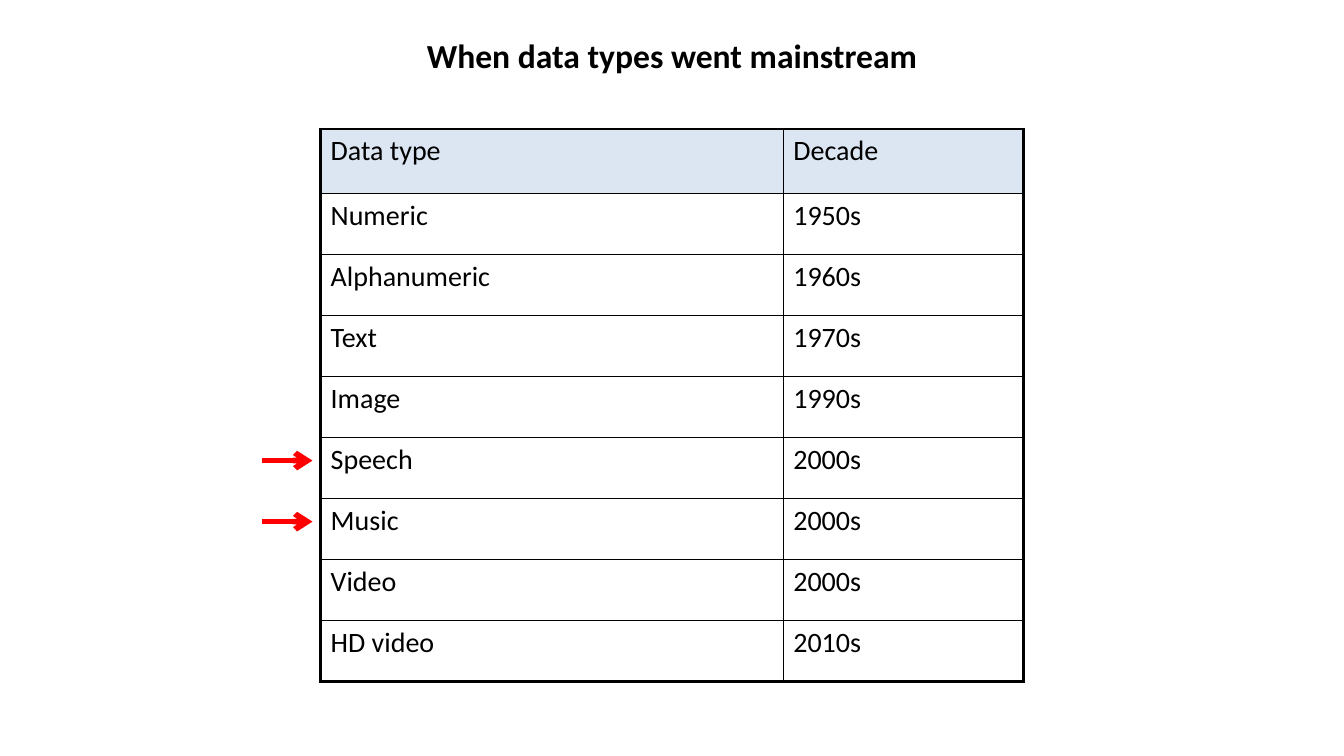
from lxml.etree import SubElement
from pptx import Presentation
from pptx.dml.color import RGBColor
from pptx.enum.shapes import MSO_CONNECTOR
from pptx.enum.text import MSO_ANCHOR, PP_ALIGN
from pptx.oxml.ns import qn
from pptx.util import Pt

TITLE = "When data types went mainstream"
ROWS = [
    ("Data type", "Decade"),
    ("Numeric", "1950s"),
    ("Alphanumeric", "1960s"),
    ("Text", "1970s"),
    ("Image", "1990s"),
    ("Speech", "2000s"),
    ("Music", "2000s"),
    ("Video", "2000s"),
    ("HD video", "2010s"),
]
MARKED = ("Speech", "Music")

BLACK, RED, HEADER_BLUE = "000000", "FF0000", "DCE6F2"
THIN, THICK = 1, 2.25
TABLE_LEFT, TABLE_TOP = 229, 92.2
COLUMN_WIDTHS = (330.5, 171.4)
HEADER_HEIGHT, ROW_HEIGHT = 46, 43.6
ARROW_LEFT, ARROW_LENGTH, ARROW_DROP = 187.2, 36, 16.4


def color(hex_code):
    return RGBColor.from_string(hex_code)


def write(frame, text, size=20, bold=False, align=PP_ALIGN.LEFT):
    para = frame.paragraphs[0]
    para.alignment = align
    span = para.add_run()
    span.text = text
    span.font.name = "Calibri"
    span.font.size = Pt(size)
    span.font.bold = bold
    span.font.color.rgb = color(BLACK)


def add_border(cell, side, width):
    """Draw one cell side (L, R, T or B); call before filling the cell."""
    properties = cell._tc.get_or_add_tcPr()
    line = SubElement(properties, qn(f"a:ln{side}"), w=str(Pt(width)))
    fill = SubElement(line, qn("a:solidFill"))
    SubElement(fill, qn("a:srgbClr"), val=BLACK)


def add_title(page):
    box = page.shapes.add_textbox(Pt(120), Pt(-6), Pt(720), Pt(90))
    box.text_frame.word_wrap = True
    box.text_frame.vertical_anchor = MSO_ANCHOR.MIDDLE
    write(box.text_frame, TITLE, size=24, bold=True, align=PP_ALIGN.CENTER)


def add_decade_table(page):
    last_row, last_column = len(ROWS) - 1, len(COLUMN_WIDTHS) - 1
    height = HEADER_HEIGHT + last_row * ROW_HEIGHT
    table = page.shapes.add_table(
        len(ROWS), len(COLUMN_WIDTHS), Pt(TABLE_LEFT), Pt(TABLE_TOP),
        Pt(sum(COLUMN_WIDTHS)), Pt(height)).table
    table.first_row = table.horz_banding = False
    for column, width in zip(table.columns, COLUMN_WIDTHS):
        column.width = Pt(width)
    for r, texts in enumerate(ROWS):
        table.rows[r].height = Pt(ROW_HEIGHT if r else HEADER_HEIGHT)
        for c, text in enumerate(texts):
            cell = table.cell(r, c)
            outer_sides = {"L": c == 0, "R": c == last_column,
                           "T": r == 0, "B": r == last_row}
            for side, is_outer in outer_sides.items():
                add_border(cell, side, THICK if is_outer else THIN)
            if r == 0:
                cell.fill.solid()
                cell.fill.fore_color.rgb = color(HEADER_BLUE)
            else:
                cell.fill.background()
            write(cell.text_frame, text)


def add_row_arrow(page, row):
    y = TABLE_TOP + HEADER_HEIGHT + (row - 1) * ROW_HEIGHT + ARROW_DROP
    arrow = page.shapes.add_connector(
        MSO_CONNECTOR.STRAIGHT, Pt(ARROW_LEFT), Pt(y),
        Pt(ARROW_LEFT + ARROW_LENGTH), Pt(y))
    arrow.line.color.rgb = color(RED)
    arrow.line.width = Pt(4)
    SubElement(arrow.line._get_or_add_ln(), qn("a:tailEnd"), type="arrow")
    SubElement(arrow._element.spPr, qn("a:effectLst"))


def main():
    deck = Presentation()
    deck.slide_width, deck.slide_height = Pt(960), Pt(540)
    page = deck.slides.add_slide(deck.slide_layouts[6])
    add_title(page)
    add_decade_table(page)
    for row, (data_type, _) in enumerate(ROWS):
        if data_type in MARKED:
            add_row_arrow(page, row)
    deck.save("out.pptx")


if __name__ == "__main__":
    main()
